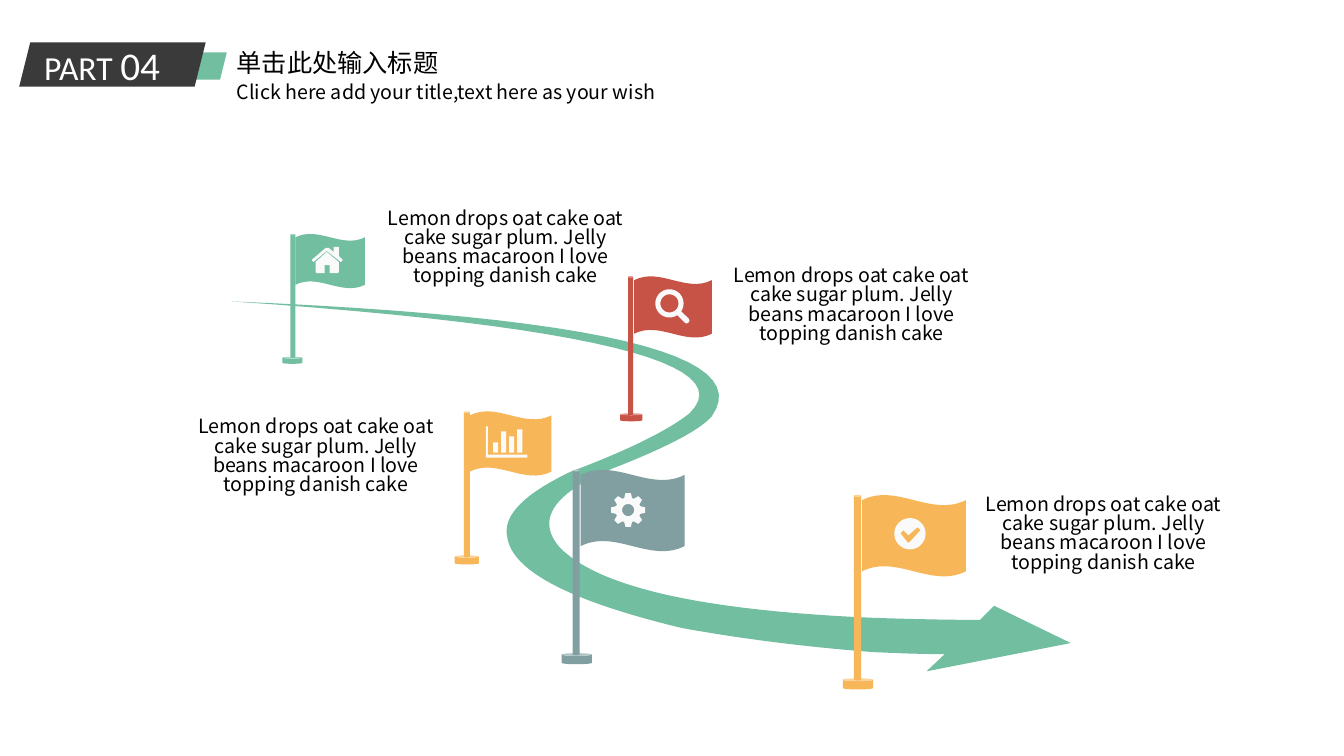
import math
import pptx
import pptx.util
import pptx.dml.color
import pptx.enum.shapes
import pptx.enum.text
import pptx.oxml.ns

PX = 9144  # 100 px to the inch
GREEN, DARK, GOLD, RED, GRAY = "71BEA0", "3A3A3A", "F7B759", "C75346", "819FA1"
PALE, BLACK, WHITE = "FAFAFA", "000000", "FFFFFF"
kinds = pptx.enum.shapes.MSO_SHAPE


def hue(code):
    return pptx.dml.color.RGBColor.from_string(code)


def arc(x, y, size, start=0, end=360):
    turns = [math.radians(start + (end - start) * i / 48) for i in range(49)]
    return [(x + size * math.cos(t), y + size * math.sin(t)) for t in turns]


deck = pptx.Presentation()
deck.slide_width, deck.slide_height = 1333 * PX, 750 * PX
slide = deck.slides.add_slide(deck.slide_layouts[6])
shapes = slide.shapes

# Road: straight arrow head, then cubic curves
road = [(972, 615), (986, 601), (1062, 638), (919, 666), (937, 649)]
curves = [
    (913, 649, 890, 648, 867, 647), (800, 642, 737, 634, 676, 623),
    (564, 596, 507, 566, 503, 532), (499, 511, 520, 490, 566, 468),
    (625, 446, 664, 426, 684, 410), (735, 360, 583, 323, 229, 299),
    (591, 314, 750, 351, 706, 413), (694, 427, 659, 445, 602, 467),
    (548, 491, 532, 516, 555, 543), (594, 583, 698, 606, 867, 613),
    (899, 614, 935, 615, 972, 615),
]
for ax, ay, bx, by, cx, cy in curves:
    x, y = road[-1]
    for i in range(1, 25):
        t = i / 24
        u = 1 - t
        road.append((u**3 * x + 3 * u * u * t * ax + 3 * u * t * t * bx + t**3 * cx,
                     u**3 * y + 3 * u * u * t * ay + 3 * u * t * t * by + t**3 * cy))

# Icons: each a list of closed loops
house = [
    [(338, 260), (324, 249), (311, 260), (309, 258), (323, 246), (326, 246), (331, 250),
     (331, 245), (336, 245), (336, 254), (340, 258)],
    [(336, 270), (335, 271), (327, 271), (327, 263), (322, 263), (322, 271), (314, 271),
     (313, 270), (313, 260), (324, 250), (336, 260)],
]
lens = [arc(664, 301, 14, 56, 394)
        + [(683, 316), (684, 318), (683, 320), (681, 321), (679, 320)],
        arc(664, 301, 9)]
chart = [[(482, 423), (484, 423), (484, 451), (523, 451), (523, 454), (482, 454)]]
for i, top in enumerate([439, 428, 433, 426]):
    x = 489 + 8 * i
    chart.append([(x, 449), (x, top), (x + 5, top), (x + 5, 449)])
teeth = []
for i in range(8):
    for turn, size in [(-18, 12.5), (-9, 17), (9, 17), (18, 12.5)]:
        t = math.radians(45 * i + turn)
        teeth.append((623 + size * math.cos(t), 506 + size * math.sin(t)))
gear = [teeth, arc(623, 506, 6)]
check = [arc(902.5, 529.5, 15.5),
         [(913, 526), (910, 523), (901, 531), (896, 526), (893, 529), (900, 538), (902, 538)]]

# Stack of parts, back to front
parts = [
    (GREEN, kinds.PARALLELOGRAM, (171, 52, 54, 27)),
    (DARK, kinds.PARALLELOGRAM, (19, 42, 185, 44)),
    (GREEN, None, [road]),
]
flags = [(576, 466, 103, GRAY), (466, 408, 81, GOLD), (629, 274, 77, RED),
         (293, 232, 69, GREEN), (855, 491, 103, GOLD)]
for x, y, wide, code in flags:
    s = wide / 103
    parts += [
        (code, kinds.WAVE, (x, y, wide, 81 * s)),
        (code, kinds.CAN, (x - 19 * s, y + 182 * s, 30 * s, 11 * s)),
        (code, kinds.CAN, (x - 8 * s, y, 7 * s, 184 * s)),
    ]
parts += [(PALE, None, icon) for icon in (house, lens, chart, gear, check)]

for code, kind, data in parts:
    if kind is None:
        loops = [[(round(x * PX), round(y * PX)) for x, y in loop] for loop in data]
        pen = shapes.build_freeform(*loops[0][0])
        for i, loop in enumerate(loops):
            if i:
                pen.move_to(*loop[0])
            pen.add_line_segments(loop[1:], close=True)
        shape = pen.convert_to_shape()
    else:
        shape = shapes.add_shape(kind, *[round(n) * PX for n in data])
        if kind == kinds.WAVE:
            shape.adjustments[0] = 0.064
    shape.shadow.inherit = False
    shape.fill.solid()
    shape.fill.fore_color.rgb = hue(code)
    shape.line.fill.background()

# Texts: box, body style, runs of (words, size), font, colour
NOTO = "Noto Sans CJK SC"
cake = "Lemon drops oat cake oat cake sugar plum. Jelly beans macaroon I love topping danish cake"
texts = [
    ((225, 74, 502, 34), False, [("Click here add your title,text here as your wish", 14)], NOTO, BLACK),
    ((225, 42, 317, 40), False, [("单击此处输入标题", 18)], NOTO, BLACK),
    ((34, 36, 154, 57), False, [("PART ", 24), ("04", 28)], "Calibri", WHITE),
]
for x, y in [(379, 208), (191, 415), (722, 265), (972, 492)]:
    texts.append(((x, y, 245, 113), True, [(cake, 14)], NOTO, BLACK))

plain = {"word_wrap": True, "auto_size": pptx.enum.text.MSO_AUTO_SIZE.SHAPE_TO_FIT_TEXT}
inset = {"word_wrap": True, "margin_left": 0, "margin_top": 0,
         "margin_right": 0, "margin_bottom": 0}
block = {"alignment": pptx.enum.text.PP_ALIGN.CENTER, "line_spacing": 0.82,
         "space_before": pptx.util.Pt(7.5)}
for box, body, runs, face, code in texts:
    frame = shapes.add_textbox(*[n * PX for n in box]).text_frame
    for key, value in (inset if body else plain).items():
        setattr(frame, key, value)
    para = frame.paragraphs[0]
    for key, value in (block if body else {}).items():
        setattr(para, key, value)
    for words, size in runs:
        run = para.add_run()
        run.text = words
        for key, value in {"name": face, "size": pptx.util.Pt(size)}.items():
            setattr(run.font, key, value)
        run.font.color.rgb = hue(code)
        # East Asian typeface
        east = pptx.oxml.parse_xml(f'<a:ea {pptx.oxml.ns.nsdecls("a")} typeface="{face}"/>')
        run._r.get_or_add_rPr().append(east)

deck.save("out.pptx")
